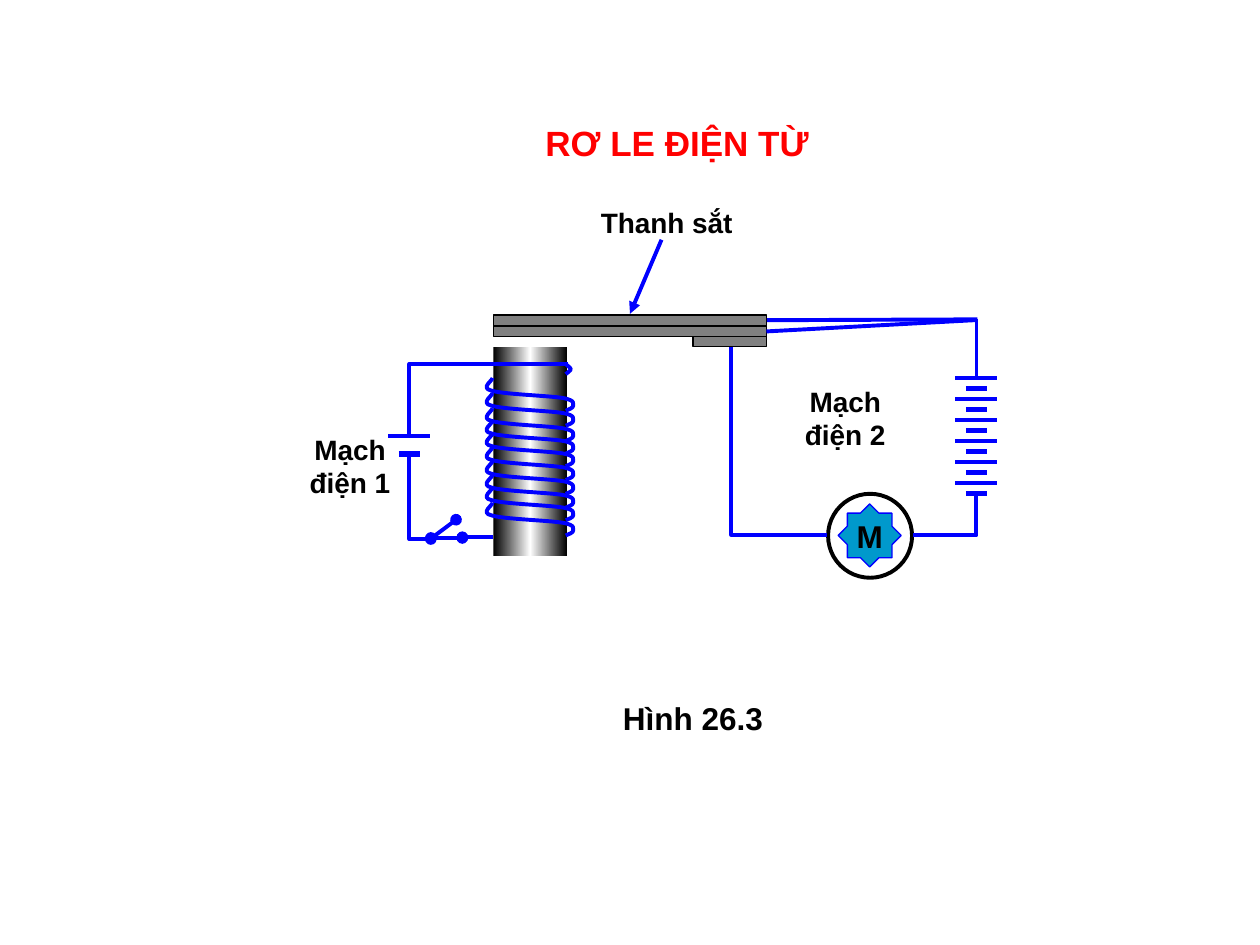
import copy
import pptx
import pptx.util
import pptx.dml.color
import pptx.enum.shapes
import pptx.enum.text
import pptx.oxml.ns

Pt = pptx.util.Pt
qn = pptx.oxml.ns.qn
Kind = pptx.enum.shapes.MSO_SHAPE

THEME = {
    "font": "Arial", "title": 20, "big": 18, "label": 16,
    "wire": "0000FF", "ink": "000000", "red": "FF0000",
    "iron": "808080", "white": "FFFFFF", "motor": "0099CC",
    "thin": 0.75, "line": 2.25, "thick": 3,
}

CORE = (282, 198, 42, 120)
PLATES = [(396, 192, 42, 6), (282, 180, 156, 6), (282, 186.3, 156, 6)]
DIAL = (473.2, 282.2, 48, 48)
STAR = (479, 288, 36, 36)

TURNS = [216, 224.6, 233.3, 240.5, 247.7, 255.6, 263.5, 271.4, 278.6, 287.3]
TURN = [(281.5, 0), (281.5, 1.4), (274.3, 5.8), (280.8, 7.2), (287.3, 9.4),
        (313.9, 10.1), (321.8, 11.5), (329.8, 13), (326.9, 15.1),
        (327.6, 15.8), (327.6, 17.3), (324.7, 18), (323.3, 18.7)]
HOOK = [(323.3, 208), (324, 208.8), (326.2, 210.2), (326.2, 211),
        (326.2, 211.7), (324, 213.1), (323.3, 213.8)]

WIRES = [
    ([(324.7, 208), (234, 208), (234, 249.8)], None, None),
    ([(234, 259.9), (234, 308), (246.2, 308)], None, "oval"),
    ([(264.2, 307), (282, 307)], "oval", None),
    ([(246.2, 307.8), (260.6, 297)], None, "oval"),
    ([(246.2, 307.4), (264.2, 307.4)], "oval", "oval"),
    ([(418, 198), (418, 305.7), (472.7, 305.7)], None, None),
    ([(522, 306), (558, 306), (558, 282.2)], None, None),
    ([(378, 137), (360, 179.3)], None, "triangle"),
    ([(558, 215.3), (558, 182.3)], None, None),
    ([(438.2, 183), (558.5, 182.5)], None, None),
    ([(558, 182.9), (438, 189.4)], None, None),
]

CELLS = [(234, 249, 259.4)] + [(558, 216 + 12 * n, 222 + 12 * n) for n in range(6)]

LABELS = [
    ("Mạch điện 2", (450, 216, 66, 46), "label", "ink"),
    ("Mạch điện 1", (164, 243.5, 72, 46), "label", "ink"),
    ("Thanh sắt", (330, 114, 102, 26.6), "label", "ink"),
    ("Hình 26.3", (336, 396, 120, 28.8), "big", "ink"),
    ("RƠ LE ĐIỆN TỪ", (246, 66, 282, 31), "title", "red"),
]

deck = pptx.Presentation()
deck.slide_width, deck.slide_height = Pt(720), Pt(540)
shapes = deck.slides.add_slide(deck.slide_layouts[6]).shapes


def hue(name):
    return pptx.dml.color.RGBColor.from_string(THEME[name])


def stroke(item, color, width):
    item.line.color.rgb = hue(color)
    item.line.width = Pt(THEME[width])


def solid(kind, box, fill, color, width):
    item = shapes.add_shape(kind, *map(Pt, box))
    item.shadow.inherit = False
    item.fill.solid()
    item.fill.fore_color.rgb = hue(fill)
    stroke(item, color, width)
    return item


def write(frame, text, size, color):
    frame.text = text
    para = frame.paragraphs[0]
    para.alignment = pptx.enum.text.PP_ALIGN.CENTER
    font = para.runs[0].font
    font.name, font.size, font.bold = THEME["font"], Pt(THEME[size]), True
    font.color.rgb = hue(color)


def trace(points):
    dots = [(Pt(x), Pt(y)) for x, y in points]
    form = shapes.build_freeform(*dots[0], scale=1.0)
    form.add_line_segments(dots[1:], close=False)
    item = form.convert_to_shape()
    item.shadow.inherit = False
    item.fill.background()
    return item


def wire(points, head=None, tail=None, width="line"):
    if len(points) == 2:
        straight = pptx.enum.shapes.MSO_CONNECTOR.STRAIGHT
        item = shapes.add_connector(straight, *[Pt(v) for dot in points for v in dot])
        stroke(item, "wire", width)
        props = item._element.spPr
        props.append(props.makeelement(qn("a:effectLst"), {}))
    else:
        item = trace(points)
        stroke(item, "wire", width)
    line = item.line._get_or_add_ln()
    for tag, mark in (("a:headEnd", head), ("a:tailEnd", tail)):
        if mark:
            line.append(line.makeelement(qn(tag), {"type": mark}))


def curve(points):
    item = trace(points)
    stroke(item, "wire", "line")
    steps = list(item._element.iter(qn("a:lnTo")))
    for start in range(0, len(steps), 3):
        bend = steps[start].makeelement(qn("a:cubicBezTo"), {})
        steps[start].addprevious(bend)
        for step in steps[start:start + 3]:
            bend.append(step[0])
            step.getparent().remove(step)


core = shapes.add_shape(Kind.RECTANGLE, *map(Pt, CORE))
core.shadow.inherit = False
core.line.fill.background()
core.fill.gradient()
core.fill.gradient_angle = 0
first = next(core._element.iter(qn("a:gs")))
first.addnext(copy.deepcopy(first))
for stop, place, color in zip(core.fill.gradient_stops, (0, 0.5, 1), ("ink", "white", "ink")):
    stop.position = place
    stop.color.rgb = hue(color)

for top in TURNS:
    curve([(x, top + y) for x, y in TURN])
curve(HOOK)

for box in PLATES:
    solid(Kind.RECTANGLE, box, "iron", "ink", "thin")
solid(Kind.OVAL, DIAL, "white", "ink", "line")
star = solid(Kind.STAR_8_POINT, STAR, "motor", "wire", "thin")
star.adjustments[0] = 0.383
star.text_frame.word_wrap = False
star.text_frame.vertical_anchor = pptx.enum.text.MSO_ANCHOR.MIDDLE
write(star.text_frame, "M", "big", "ink")

for points, head, tail in WIRES:
    wire(points, head, tail)
for mid, long, short in CELLS:
    wire([(mid - 12, long), (mid + 12, long)])
    wire([(mid - 6, short), (mid + 6, short)], width="thick")

for text, box, size, color in LABELS:
    frame = shapes.add_textbox(*map(Pt, box)).text_frame
    frame.word_wrap = True
    write(frame, text, size, color)

deck.save("out.pptx")
